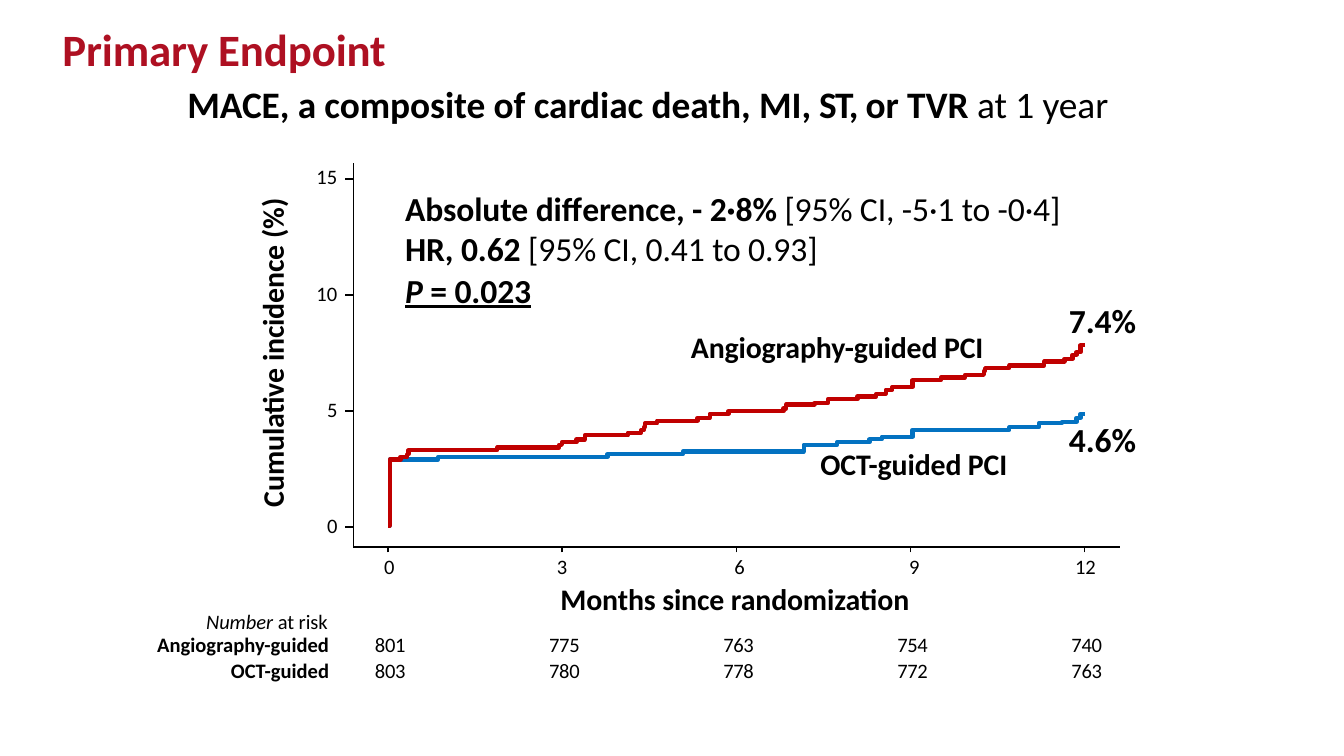
from pptx import Presentation
from pptx.dml.color import RGBColor
from pptx.enum.shapes import MSO_CONNECTOR
from pptx.enum.text import MSO_ANCHOR, MSO_AUTO_SIZE, PP_ALIGN
from pptx.oxml.ns import qn
from pptx.util import Inches, Pt
from lxml import etree

LEFT, CENTER, RIGHT = PP_ALIGN.LEFT, PP_ALIGN.CENTER, PP_ALIGN.RIGHT
TOP, FIT, STRAIGHT = MSO_ANCHOR.TOP, MSO_AUTO_SIZE.SHAPE_TO_FIT_TEXT, MSO_CONNECTOR.STRAIGHT
FONT, BLACK, RED, CURVE_RED, BLUE = "Calibri", "000000", "AE1022", "C00000", "0372C1"

# --- Content: a paragraph is (runs, format); a run is (text, font values) ---
B, N, U = {"bold": True}, {"bold": False}, {"bold": True, "underline": True}
TITLE = [([("Primary Endpoint", B)], {"before": 1})]
SUBTITLE = [([("MACE, a composite of cardiac death, MI, ", B),
              ("ST, ", {"bold": True, "spc": -70}),
              ("or TVR ", B), ("at 1 year", N)], {"before": 1})]
RESULTS = [
    ([("Absolute difference, - 2·8% ", B), ("[95% CI, -5·1 to -0·4]", N)],
     {"line": 21.4, "before": 1}),
    ([("HR, 0.62 ", B), ("[95% CI, 0.41 to 0.93]", N)], {"line": 21.4}),
    ([("P ", {**U, "italic": True}), ("= 0.023", U)], {"before": 0.5}),
    ([("Angiography-guided PCI", {"bold": True, "size": Pt(16)})],
     {"before": 9.9, "indent": Inches(2.14)}),
]
Y_TITLE = [([("Cumulative incidence (%)", B)], {"before": 0.2})]
X_AXIS = [
    ([("3\t6\t9", {"spc": 0})], {"before": 1.6, "tabs": (1.32, 2.62)}),
    ([("Months since randomization", {"bold": True, "size": Pt(16)})],
     {"before": 1, "indent": Inches(0.04)}),
]
RISK_TITLE = [([("Number ", {"italic": True}), ("at risk", {"italic": False})], {"before": 1})]
RISK = [("Angiography-guided", "801", "775", "763", "754", "740"),
        ("OCT-guided", "803", "780", "778", "772", "763")]
# width, alignment, left indent, right indent
RISK_COLS = [(1.49, RIGHT, 0, 0.17), (0.93, LEFT, 0.17, 0), (1.3, CENTER, 0, 0),
             (1.3, RIGHT, 0, 0.54), (1.3, CENTER, 0, 0.02), (0.79, RIGHT, 0, 0.04)]
# text, box, size
LABELS = [("OCT-guided PCI", (6.09, 3.3, 1.44, 0.29), 16),
          ("4.6%", (7.94, 3.1, 0.53, 0.33), 18),
          ("7.4%", (7.94, 2.22, 0.53, 0.33), 18)]

# Each curve moves level to x, then vertically to y (inches)
OCT_STEPS = [
    (2.9, 3.42), (3.26, 3.4), (4.52, 3.38), (5.08, 3.36), (5.98, 3.31), (6.23, 3.29),
    (6.47, 3.27), (6.56, 3.25), (6.79, 3.2), (7.51, 3.18), (7.73, 3.15), (7.9, 3.14),
    (8.01, 3.11), (8.04, 3.08)]
ANGIO_STEPS = [
    (2.9, 3.42), (2.98, 3.4), (3.03, 3.38), (3.04, 3.35), (3.7, 3.33), (4.16, 3.31),
    (4.18, 3.29), (4.29, 3.27), (4.35, 3.24), (4.67, 3.22), (4.77, 3.2), (4.79, 3.18),
    (4.8, 3.15), (4.89, 3.13), (5.19, 3.11), (5.28, 3.08), (5.42, 3.06), (5.83, 3.04),
    (5.85, 3.01), (6.06, 3), (6.16, 2.97), (6.38, 2.95), (6.52, 2.93), (6.59, 2.9),
    (6.64, 2.88), (6.79, 2.83), (7, 2.81), (7.18, 2.79), (7.32, 2.76), (7.33, 2.74),
    (7.51, 2.72), (7.77, 2.69), (7.92, 2.67), (7.98, 2.64), (8.01, 2.62), (8.04, 2.57)]

# --- Plot geometry ---
AXIS_X, AXIS_Y, AXIS_TOP, AXIS_RIGHT = 2.63, 4.07, 1.21, 8.33
ZERO_X, ZERO_Y, END_X, CURVE_START = 2.89, 3.92, 8.07, 3.91
MONTHS, PERCENTS = (0, 3, 6, 9, 12), (15, 10, 5, 0)
PER_MONTH, PER_PERCENT = (END_X - ZERO_X) / MONTHS[-1], 2.59 / PERCENTS[0]


def color(value):
    return RGBColor.from_string(value)


def fill_text(tf, paragraphs, size, rgb=BLACK):
    for i, (runs, fmt) in enumerate(paragraphs):
        p = tf.paragraphs[0] if i == 0 else tf.add_paragraph()
        pPr = p._p.get_or_add_pPr()
        pPr.set("marL", str(int(fmt.get("indent", Pt(1)))))
        pPr.set("marR", str(int(fmt.get("right", 0))))
        etree.SubElement(pPr, qn("a:buNone"))
        if "tabs" in fmt:
            tabs = etree.SubElement(pPr, qn("a:tabLst"))
            for stop in fmt["tabs"]:
                etree.SubElement(tabs, qn("a:tab"), pos=str(int(Inches(stop))), algn="l")
        else:  # an explicit first-line indent would cancel the tab stops
            pPr.set("indent", "0")
        p.alignment = fmt.get("align", LEFT)
        p.space_before = Pt(fmt.get("before", 0))
        p.line_spacing = Pt(fmt["line"]) if "line" in fmt else 1.0
        for text, values in runs:
            r = p.add_run()
            r.text = text
            font = {"name": FONT, "size": Pt(size), **values}
            r._r.get_or_add_rPr().set("spc", str(font.pop("spc", -5)))
            for key, value in font.items():
                setattr(r.font, key, value)
            r.font.color.rgb = color(rgb)


def set_box(sp, box, paragraphs, size, rgb=BLACK, top=1):
    sp.left, sp.top, sp.width, sp.height = map(Inches, box)
    tf = sp.text_frame
    frame = {"word_wrap": True, "auto_size": FIT, "vertical_anchor": TOP, "margin_left": 0,
             "margin_right": 0, "margin_top": Pt(top), "margin_bottom": 0}
    for key, value in frame.items():
        setattr(tf, key, value)
    fill_text(tf, paragraphs, size, rgb)
    return tf


def add_text(box, paragraphs, size, top=1):
    return set_box(s.shapes.add_textbox(0, 0, 0, 0), box, paragraphs, size, top=top)


def add_tick_label(value, left, top, width):
    add_text((left, top, width, 0.21), [([(str(value), {"spc": 0})], {"before": 1})], 11)


def label_width(value):
    return 0.03 + 0.08 * len(str(value))


def add_line(x1, y1, x2, y2, width=1):
    line = s.shapes.add_connector(STRAIGHT, *map(Inches, (x1, y1, x2, y2)))
    line.line.color.rgb = color(BLACK)
    line.line.width = Pt(width)
    etree.SubElement(line._element.spPr, qn("a:effectLst"))


def add_curve(steps, rgb):
    y, points = CURVE_START, []
    for x, next_y in steps:
        points += [(x, y), (x, next_y)]
        y = next_y
    points.append((END_X, y))
    builder = s.shapes.build_freeform(Inches(ZERO_X), Inches(CURVE_START))
    builder.add_line_segments([(Inches(a), Inches(b)) for a, b in points], close=False)
    curve = builder.convert_to_shape()
    curve.shadow.inherit = False
    curve.fill.background()
    curve.line.color.rgb = color(rgb)
    curve.line.width = Pt(2.25)


prs = Presentation()
prs.slide_width = Inches(10)
prs.slide_height = prs.slide_width * 9 // 16
s = prs.slides.add_slide(prs.slide_layouts[1])

# Headings
set_box(s.shapes.title, (0.45, 0.15, 2.44, 0.43), TITLE, 24, RED)
add_text((1.38, 0.59, 6.94, 0.36), SUBTITLE, 20)

# Axis titles
y_title = add_text((1.89, 1.44, 0.3, 2.35), Y_TITLE, 16, top=0)
y_title._txBody.bodyPr.set("vert", "vert270")
add_text((4.13, 4.1, 2.72, 0.5), X_AXIS, 11, top=1.5)

# Numbers at risk
add_text((1.52, 4.52, 0.94, 0.21), RISK_TITLE, 11)
total_width = sum(col[0] for col in RISK_COLS)
table = s.shapes.add_table(len(RISK), len(RISK_COLS), Inches(1.13), Inches(4.7),
                           Inches(total_width), Inches(0.44)).table
table.first_row = table.horz_banding = False
for i, row in enumerate(RISK):
    table.rows[i].height = Inches(0.22)
    for j, (text, (width, align, indent, right)) in enumerate(zip(row, RISK_COLS)):
        table.columns[j].width = Inches(width)
        cell = table.cell(i, j)
        cell.fill.background()
        cell.margin_left = cell.margin_right = cell.margin_bottom = 0
        cell.margin_top = Inches(0 if i else 0.03)
        fmt = {"align": align, "line": 12.2, "before": 0 if i else 2.5,
               "indent": Inches(indent), "right": Inches(right)}
        font = {"bold": j == 0, "spc": -20 if j else 0}
        fill_text(cell.text_frame, [([(text, font)], fmt)], 11)

# Axes, ticks and tick labels
add_line(AXIS_X, AXIS_Y, AXIS_RIGHT, AXIS_Y, 0.9)
add_line(AXIS_X, AXIS_Y, AXIS_X, AXIS_TOP, 0.9)
for month in MONTHS:
    x = ZERO_X + PER_MONTH * month
    add_line(x, AXIS_Y + 0.04, x, AXIS_Y)
    if month in (MONTHS[0], MONTHS[-1]):
        w = label_width(month)
        add_tick_label(month, x + 0.01 - w / 2, 4.11, w)
for percent in PERCENTS:
    y = ZERO_Y - PER_PERCENT * percent
    w = label_width(percent)
    add_line(AXIS_X - 0.06, y, AXIS_X, y)
    add_tick_label(percent, 2.53 - w, y - 0.12, w)

# Curves, results and curve labels
add_curve(OCT_STEPS, BLUE)
set_box(s.placeholders[1], (3, 1.39, 4.94, 1.33), RESULTS, 18)
add_curve(ANGIO_STEPS, CURVE_RED)
for text, box, size in LABELS:
    add_text(box, [([(text, B)], {"before": 1})], size)

prs.save("out.pptx")
